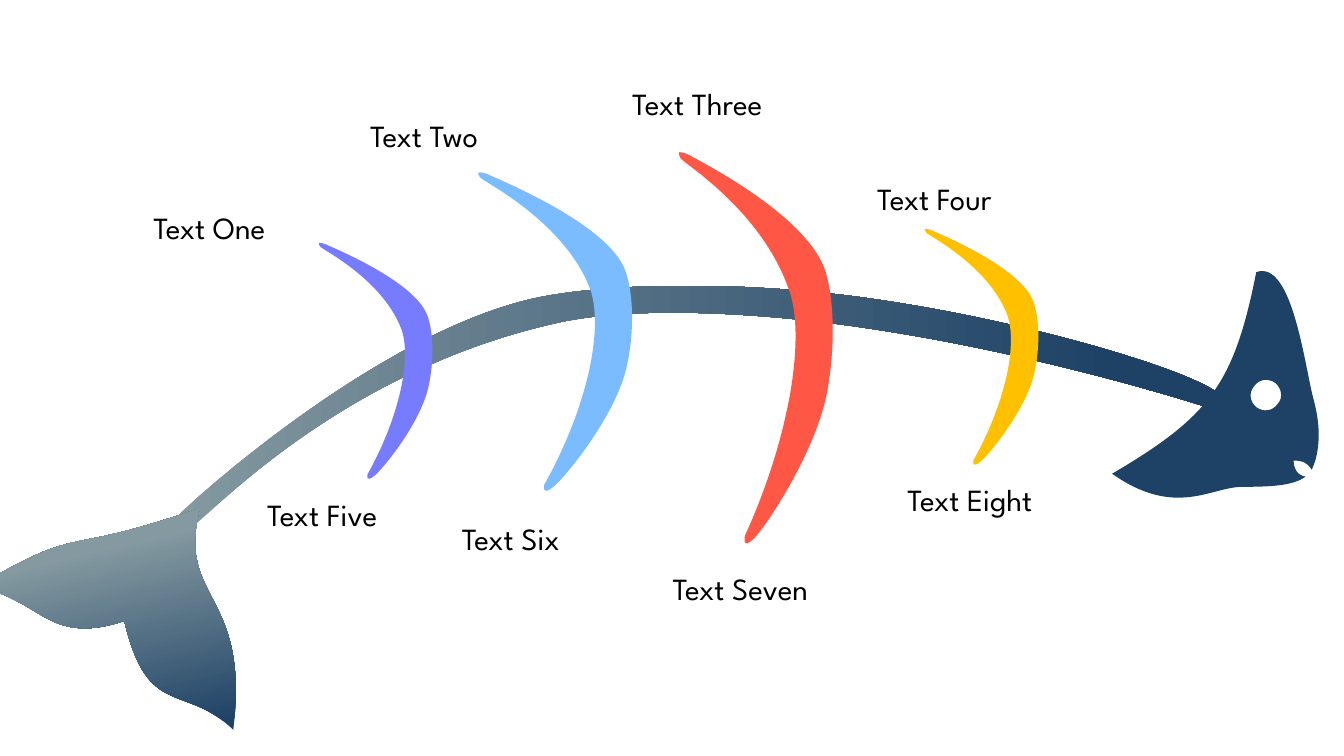
from dataclasses import dataclass
from math import cos, radians, sin

from lxml.etree import SubElement
from pptx import Presentation
from pptx.dml.color import RGBColor
from pptx.enum.text import MSO_ANCHOR, MSO_AUTO_SIZE, PP_ALIGN
from pptx.oxml.ns import qn
from pptx.util import Cm, Pt

CM_PER_UNIT = 2.54
CURVE_STEPS = 40


@dataclass(frozen=True)
class Theme:
    font: str = "League Spartan"
    label_size: int = 22
    text: str = "000000"
    navy: str = "1E4266"
    mist: str = "8499A0"
    violet: str = "777CFF"
    sky: str = "7BBBFF"
    coral: str = "FF5746"
    amber: str = "FFC000"


SPINE = [[(1.73, 5.26),
          (1.73, 5.26, 1.71, 5.16, 1.8, 5.08),
          (1.89, 4.99, 3.73, 3.31, 5.3, 2.96),
          (5.99, 2.81, 7.28, 2.78, 8.55, 2.95),
          (10.15, 3.17, 11.72, 3.65, 12.05, 3.88),
          (12.39, 4.11, 11.97, 4.04, 11.97, 4.04),
          (11.97, 4.04, 10.45, 3.54, 8.69, 3.27),
          (7.6, 3.1, 6.31, 3.03, 5.54, 3.2),
          (3.32, 3.69, 2.03, 5.18, 1.88, 5.24),
          (1.73, 5.3, 1.73, 5.26, 1.73, 5.26)]]

HEAD = [[(12.83, 4.57),
         (12.91, 4.57, 12.96, 4.58, 13.01, 4.66),
         (13.07, 4.54, 13.12, 4.3, 13.03, 3.97),
         (12.94, 3.64, 12.82, 2.57, 12.46, 2.7),
         (12.24, 3.81, 12, 4.13, 11.03, 4.7),
         (11.67, 5.15, 12.02, 4.82, 12.34, 4.83),
         (12.66, 4.83, 12.83, 4.81, 12.95, 4.73),
         (12.85, 4.71, 12.83, 4.63, 12.83, 4.57)],
        [(12.46, 4.04),
         (12.4, 3.99, 12.38, 3.9, 12.44, 3.83),
         (12.49, 3.76, 12.58, 3.75, 12.65, 3.8),
         (12.71, 3.85, 12.73, 3.95, 12.67, 4.01),
         (12.62, 4.08, 12.53, 4.09, 12.46, 4.04)]]

TAIL = [[(1.98, 5.05),
         (1.74, 5.98, 2.48, 5.86, 2.31, 7.25),
         (1.82, 6.78, 1.46, 7.15, 1.23, 6.17),
         (0.47, 6.42, 0.42, 5.96, -0.23, 5.83),
         (0.85, 5.19, 0.54, 5.55, 1.98, 5.05)]]
TAIL_CENTRE = (1.1, 6.39)
TAIL_TURN = 166.8

RIB = [[(0.01, 0),
        (0.01, 0, 0.06, 0, 0.11, 0.03),
        (0.15, 0.06, 1.28, 0.61, 1.46, 1.19),
        (1.54, 1.45, 1.56, 1.93, 1.47, 2.4),
        (1.35, 2.99, 0.87, 3.71, 0.75, 3.83),
        (0.62, 3.96, 0.66, 3.8, 0.66, 3.8),
        (0.66, 3.8, 0.93, 3.24, 1.07, 2.58),
        (1.16, 2.18, 1.2, 1.7, 1.11, 1.41),
        (0.85, 0.59, 0.05, 0.11, 0.02, 0.06),
        (-0.01, 0, 0.01, 0, 0.01, 0)]]
RIB_WIDTH, RIB_HEIGHT = 1.53, 3.88

LABELS = [("Text One", 1.52, 2.07, 1.72), ("Text Two", 3.67, 1.16, 1.81),
          ("Text Three", 6.27, 0.84, 1.81), ("Text Four", 8.7, 1.78, 1.81),
          ("Text Five", 2.65, 4.92, 1.96), ("Text Six", 4.58, 5.15, 1.95),
          ("Text Seven", 6.67, 5.65, 1.95), ("Text Eight", 9, 4.77, 1.95)]
LABEL_HEIGHT = 0.37


def length(value):
    return Cm(value * CM_PER_UNIT)


def turn(point, centre, degrees):
    angle = radians(degrees)
    x, y = point[0] - centre[0], point[1] - centre[1]
    return (centre[0] + x * cos(angle) - y * sin(angle),
            centre[1] + x * sin(angle) + y * cos(angle))


def corner_points(contour, place):
    points = [pair for knot in contour for pair in zip(knot[::2], knot[1::2])]
    return [tuple(length(value) for value in place(point)) for point in points]


def sample(corners):
    points = [corners[0]]
    for start in range(0, len(corners) - 1, 3):
        for step in range(1, CURVE_STEPS + 1):
            t = step / CURVE_STEPS
            weights = ((1 - t) ** 3, 3 * t * (1 - t) ** 2, 3 * t * t * (1 - t), t ** 3)
            points.append(tuple(sum(weight * corner[axis] for weight, corner
                                    in zip(weights, corners[start:start + 4])) for axis in (0, 1)))
    return points


def add_command(route, name, points, origin):
    command = SubElement(route, qn(name))
    for x, y in points:
        SubElement(command, qn("a:pt"), x=str(x - origin[0]), y=str(y - origin[1]))


def write(box, text, *, font, size, color, align=PP_ALIGN.LEFT):
    para = box.text_frame.paragraphs[0]
    para.alignment = align
    span = para.add_run()
    span.text = text
    span.font.name = font
    span.font.size = Pt(size)
    span.font.color.rgb = RGBColor.from_string(color)


class FishPage:
    def __init__(self, page, theme):
        self.page = page
        self.theme = theme

    def label(self, text, left, top, width):
        box = self.page.shapes.add_textbox(length(left), length(top), length(width), length(LABEL_HEIGHT))
        frame = box.text_frame
        frame.word_wrap = True
        frame.auto_size = MSO_AUTO_SIZE.SHAPE_TO_FIT_TEXT
        frame.vertical_anchor = MSO_ANCHOR.MIDDLE
        frame.margin_left = frame.margin_top = frame.margin_right = frame.margin_bottom = 0
        write(box, text, font=self.theme.font, size=self.theme.label_size, color=self.theme.text)

    def outline(self, contours, place=lambda point: point):
        loops = [corner_points(contour, place) for contour in contours]
        extent = [point for corners in loops for point in sample(corners)]
        builder = self.page.shapes.build_freeform(*extent[0], scale=1.0)
        builder.add_line_segments(extent[1:])
        shape = builder.convert_to_shape()
        origin = (shape.left, shape.top)
        route = next(shape._element.iter(qn("a:path")))
        for command in list(route):
            route.remove(command)
        for corners in loops:
            add_command(route, "a:moveTo", corners[:1], origin)
            for start in range(1, len(corners), 3):
                add_command(route, "a:cubicBezTo", corners[start:start + 3], origin)
            SubElement(route, qn("a:close"))
        shape.shadow.inherit = False
        shape.line.fill.background()
        return shape

    def solid(self, shape, color):
        shape.fill.solid()
        shape.fill.fore_color.rgb = RGBColor.from_string(color)

    def gradient(self, shape, stops, angle):
        shape.fill.gradient()
        shape.fill.gradient_angle = angle
        for stop, (position, color) in zip(shape.fill.gradient_stops, stops):
            stop.position = position
            stop.color.rgb = RGBColor.from_string(color)

    def rib(self, left, top, width, height, color):
        shape = self.outline(RIB, lambda point: (left + point[0] * width / RIB_WIDTH,
                                                 top + point[1] * height / RIB_HEIGHT))
        self.solid(shape, color)

    def tail(self):
        shape = self.outline(TAIL, lambda point: turn(point, TAIL_CENTRE, -TAIL_TURN))
        shape.rotation = TAIL_TURN
        self.gradient(shape, [(0.18, self.theme.navy), (0.79, self.theme.mist)], 270)


def main():
    deck = Presentation()
    deck.slide_width, deck.slide_height = length(13.33), length(7.5)
    theme = Theme()
    fish = FishPage(deck.slides.add_slide(deck.slide_layouts[6]), theme)
    for label in LABELS[:2]:
        fish.label(*label)
    fish.gradient(fish.outline(SPINE), [(0, theme.mist), (0.89, theme.navy)], 0)
    fish.solid(fish.outline(HEAD), theme.navy)
    for rib in [(4.74, 1.71, 1.53, 3.16, theme.sky), (6.73, 1.51, 1.53, 3.88, theme.coral),
                (3.16, 2.41, 1.13, 2.34, theme.violet), (9.17, 2.27, 1.13, 2.34, theme.amber)]:
        fish.rib(*rib)
    fish.tail()
    for label in LABELS[2:]:
        fish.label(*label)
    deck.save("out.pptx")


if __name__ == "__main__":
    main()
